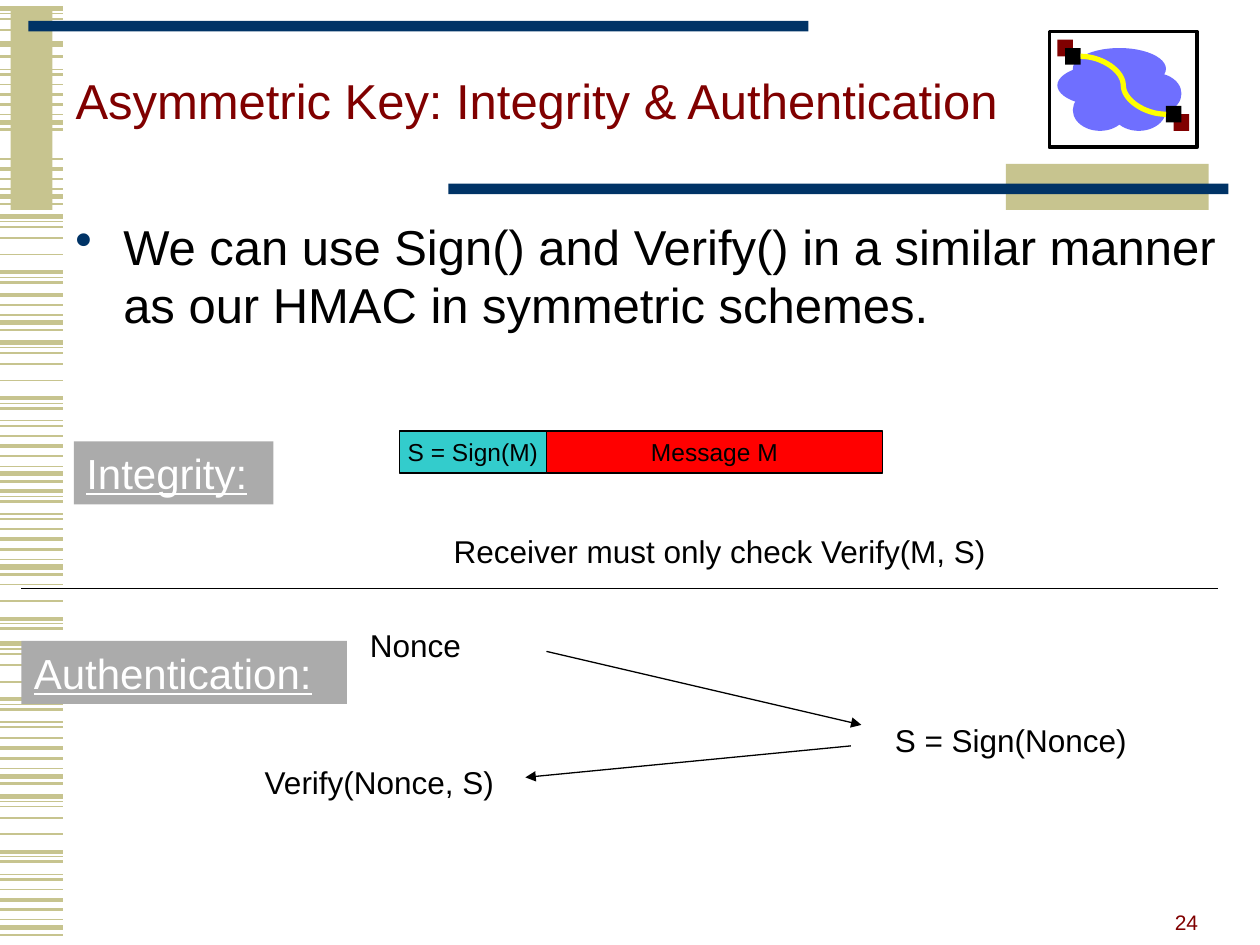
from pptx import Presentation
from pptx.dml.color import RGBColor
from pptx.enum.shapes import MSO_CONNECTOR, MSO_SHAPE
from pptx.enum.text import MSO_ANCHOR, MSO_AUTO_SIZE, PP_ALIGN
from pptx.oxml.ns import qn
from pptx.util import Inches, Pt
from lxml.etree import SubElement

INK = {"sand": "C7C48F", "navy": "003366", "maroon": "800000", "white": "FFFFFF",
       "black": "000000", "cloud": "6F6FFF", "cable": "FFFF00", "gray": "ABABAB",
       "teal": "33CCCC", "red": "FF0000"}
SHORT = [(-0.08, 1), (0, 2.25), (0.08, 1.5), (0.16, 0.75), (0.22, 3), (0.28, 1.5)]
LONG = [(0, 3), (0.04, 0.75), (0.08, 1), (0.17, 1), (0.3, 1), (0.44, 2.25),
        (0.48, 0.75), (0.52, 1.5), (0.62, 0.75), (0.66, 1.5)]
BANDS = [
    (SHORT, [(7.14, 0, 6), (5.94, 0, 6), (4.28, 0, 6), (3.54, 0, 6),
             (2.34, 1, 6), (1.34, 0, 6), (0.75, 0, 6), (0.13, 4, 5)]),
    (LONG, [(6.32, 0, 10), (5.11, 0, 10), (4.47, 3, 8), (3.46, 5, 10),
            (2.72, 0, 10), (1.72, 0, 8), (-0.07, 7, 10), (0.07, 0, 4)]),
]


def hue(name):
    """Return the colour of that name."""
    return RGBColor.from_string(INK[name])


class Grid:
    """A box on the slide, split into columns and rows."""

    def __init__(self, slide, box, cols, rows):
        """Keep the box, in inches, and the size of one cell."""
        self.slide, self.box = slide, box
        self.dx, self.dy = box[2] / cols, box[3] / rows

    def spot(self, col, row):
        """Return the slide position of a grid point."""
        return Inches(self.box[0] + col * self.dx), Inches(self.box[1] + row * self.dy)

    def area(self, col, row, wide, high):
        """Return the frame of a block of cells."""
        return *self.spot(col, row), Inches(wide * self.dx), Inches(high * self.dy)

    def shape(self, cells, fill, edge=None, width=0.75, kind=MSO_SHAPE.RECTANGLE):
        """Add a filled shape."""
        part = self.slide.shapes.add_shape(kind, *self.area(*cells))
        part.shadow.inherit = False
        part.fill.solid()
        part.fill.fore_color.rgb = hue(fill)
        if edge:
            part.line.color.rgb = hue(edge)
            part.line.width = Pt(width)
        else:
            part.line.fill.background()
        return part

    def line(self, start, end, color="black", width=0.75, arrow=False,
             kind=MSO_CONNECTOR.STRAIGHT):
        """Add a connector, with an arrowhead if asked."""
        link = self.slide.shapes.add_connector(kind, *self.spot(*start), *self.spot(*end))
        link.line.color.rgb = hue(color)
        link.line.width = Pt(width)
        if arrow:
            SubElement(link.line._get_or_add_ln(), qn("a:tailEnd"), type="triangle")
        SubElement(link._element.spPr, qn("a:effectLst"))

    def text(self, cells, words, size=18, color="black", **look):
        """Add a text box."""
        part = self.slide.shapes.add_textbox(*self.area(*cells))
        return write(part, words, size, color, **look)


def write(part, words, size, color, align=PP_ALIGN.LEFT, anchor=MSO_ANCHOR.TOP,
          wrap=True, under=None):
    """Put one formatted paragraph in a shape and return it."""
    frame = part.text_frame
    frame.text = words
    frame.auto_size = MSO_AUTO_SIZE.NONE
    frame.word_wrap = wrap
    frame.vertical_anchor = anchor
    para = frame.paragraphs[0]
    para.alignment = align
    font = para.runs[0].font
    font.name, font.size, font.underline = "Arial", Pt(size), under
    font.color.rgb = hue(color)
    return para


def stripes(slide, box):
    """Draw the striped left margin from its two repeating bands."""
    grid = Grid(slide, box, 1, box[3])
    for band, places in BANDS:
        for top, first, last in places:
            for step, width in band[first:last]:
                grid.line((0, top + step), (1, top + step), "sand", width)


def bars(slide, box):
    """Draw the blocks and rules around the title."""
    grid = Grid(slide, box, 120, 90)
    for cells, fill in [((1, 1, 4, 19), "sand"), ((2.7, 2, 74.3, 1), "navy"),
                        ((95.8, 15.6, 19.3, 4.4), "sand"),
                        ((42.7, 17.5, 74.3, 1), "navy")]:
        grid.shape(cells, fill)


def icon(slide, box):
    """Draw the framed cloud with two linked nodes."""
    grid = Grid(slide, box, 19, 14)
    grid.shape((0, 0, 19, 14), "white", "black", 2.25)
    grid.shape((16, 10, 2, 2), "maroon")
    for col, row, wide in [(1, 4, 12), (3, 2, 12), (3, 7, 7), (8, 7, 7),
                           (8, 5, 7), (10, 5, 7)]:
        grid.shape((col, row, wide, 5), "cloud", kind=MSO_SHAPE.OVAL)
    for col, row, fill in [(1, 1, "maroon"), (2, 2, "black"), (15, 9, "black")]:
        grid.shape((col, row, 2, 2), fill)
    grid.line((4, 3), (15, 10), "cable", 3, kind=MSO_CONNECTOR.CURVE)


def head(slide, box):
    """Place the title, the bullet and the page number."""
    grid = Grid(slide, box, 120, 90)
    title = slide.shapes.title
    title.left, title.top, title.width, title.height = grid.area(6, 2, 111, 16)
    para = write(title, "Asymmetric Key: Integrity & Authentication", 28, "maroon",
                 anchor=MSO_ANCHOR.MIDDLE)
    para.line_spacing = 0.85
    para = grid.text((6, 20, 111.2, 14.6), "We can use Sign() and Verify() in a similar "
                     "manner as our HMAC in symmetric schemes.", 28)
    props = para._p.get_or_add_pPr()
    props.set("marL", str(Inches(0.38)))
    props.set("indent", str(Inches(-0.38)))
    tint = SubElement(props, qn("a:buClr"))
    SubElement(tint, qn("a:srgbClr"), val=INK["navy"])
    SubElement(props, qn("a:buChar"), char="•")
    grid.text((86.5, 83.6, 28.8, 6), "24", 12, "maroon", align=PP_ALIGN.RIGHT,
              anchor=MSO_ANCHOR.BOTTOM)


def label(grid, cells, words):
    """Add a gray section label."""
    write(grid.shape(cells, "gray"), words, 24, "white", under=True)


def proof(slide, box):
    """Show the signed message and its check."""
    grid = Grid(slide, box, 114, 15)
    label(grid, (5, 1, 19, 6), "Integrity:")
    for col, wide, fill, words in [(36, 14, "teal", "S = Sign(M)"),
                                   (50, 32, "red", "Message M")]:
        part = grid.shape((col, 0, wide, 4), fill, "black")
        write(part, words, 14, "black", PP_ALIGN.CENTER, MSO_ANCHOR.MIDDLE, False)
    grid.text((40, 9, 55, 4.8), "Receiver must only check Verify(M, S)")
    grid.line((0, 15), (114, 15))


def login(slide, box):
    """Show the nonce exchange."""
    grid = Grid(slide, box, 114, 18)
    label(grid, (0, 2, 31, 6), "Authentication:")
    grid.line((50, 3), (80, 10), arrow=True)
    grid.line((79, 12), (48, 15), arrow=True)
    for col, row, wide, words in [(32, 0, 15, "Nonce"), (82, 9, 28, "S = Sign(Nonce)"),
                                  (22, 13, 25, "Verify(Nonce, S)")]:
        grid.text((col, row, wide, 4.8), words)


def main():
    """Build and save the slide."""
    deck = Presentation()
    deck.slide_width, deck.slide_height = Inches(10), Inches(7.5)
    slide = deck.slides.add_slide(deck.slide_layouts[5])
    page = (0, 0, 10, 7.5)
    stripes(slide, (0, 0, 0.5, 7.5))
    bars(slide, page)
    icon(slide, (8.33, 0.25, 1.17, 0.92))
    head(slide, page)
    proof(slide, (0.17, 3.42, 9.5, 1.25))
    login(slide, (0.17, 4.92, 9.5, 1.5))
    deck.save("out.pptx")


if __name__ == "__main__":
    main()
